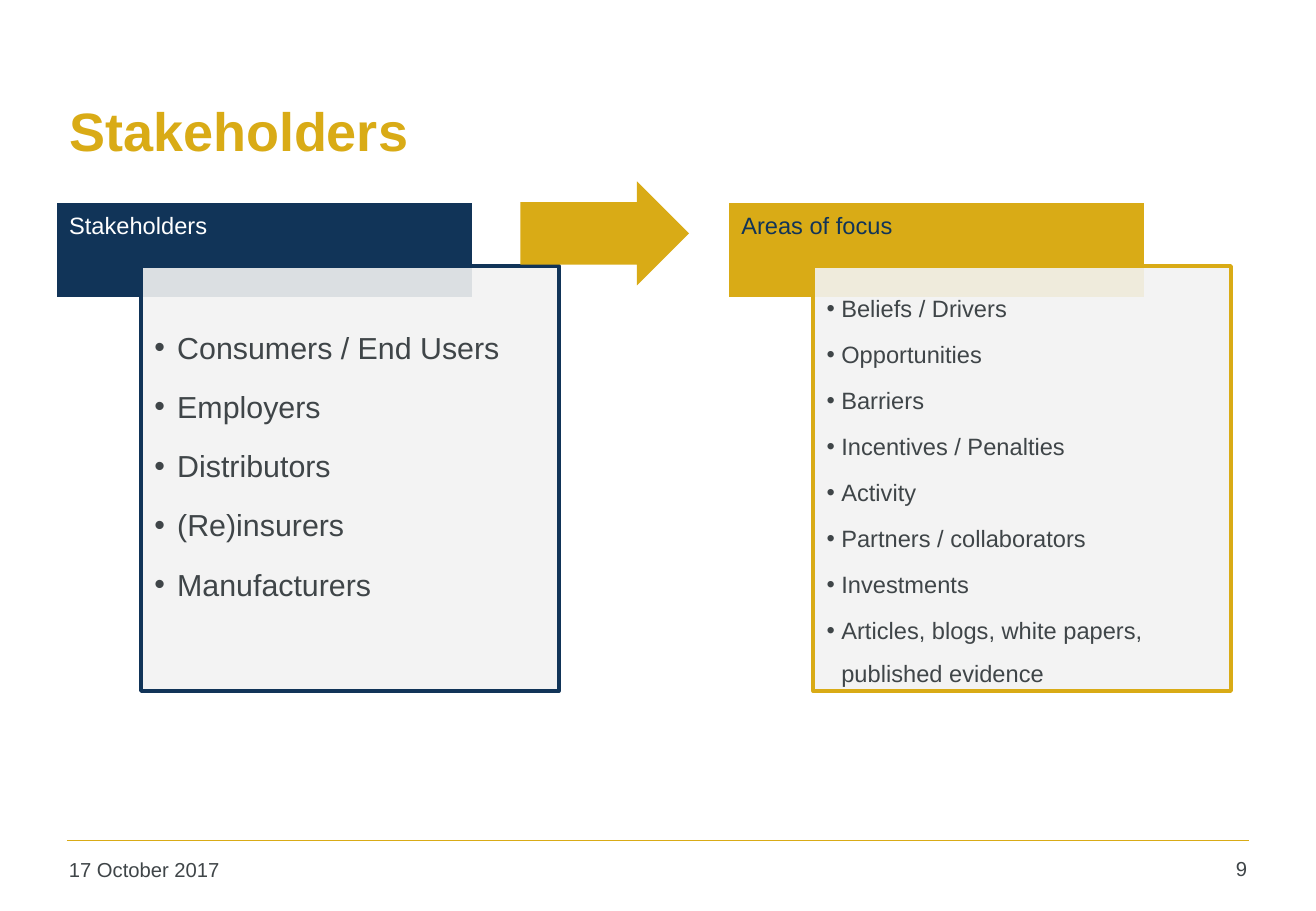
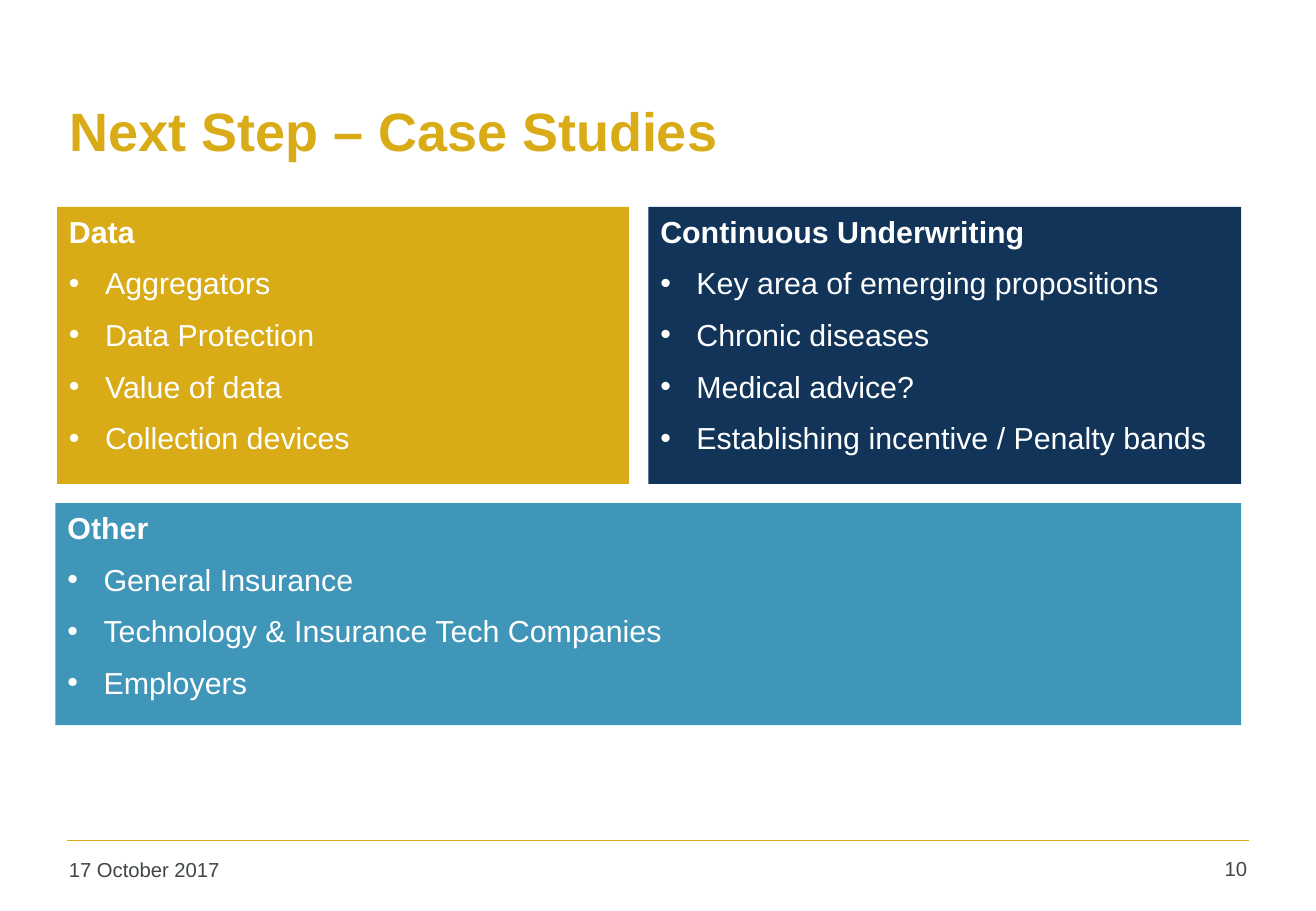
from pptx import Presentation
from pptx.dml.color import RGBColor
from pptx.enum.shapes import MSO_CONNECTOR, MSO_SHAPE
from pptx.enum.text import MSO_ANCHOR, PP_ALIGN
from pptx.oxml.ns import qn
from pptx.util import Pt
from lxml import etree

RECT, FLOW = MSO_SHAPE.RECTANGLE, MSO_SHAPE.FLOWCHART_PROCESS
ARROW, LINE = MSO_SHAPE.RIGHT_ARROW, MSO_CONNECTOR.STRAIGHT
TOP, MIDDLE = MSO_ANCHOR.TOP, MSO_ANCHOR.MIDDLE
LEFT, RIGHT = PP_ALIGN.LEFT, PP_ALIGN.RIGHT

GOLD = RGBColor(0xD9, 0xAB, 0x16)
NAVY = RGBColor(0x11, 0x34, 0x58)
BLUE = RGBColor(0x40, 0x96, 0xB8)
PALE = RGBColor(0xF2, 0xF2, 0xF2)
GREY = RGBColor(0x3F, 0x45, 0x48)
WHITE = RGBColor(0xFF, 0xFF, 0xFF)


def add_box(slide, kind, place, fill, edge=None):
    box = slide.shapes.add_shape(kind, *map(Pt, place))
    box.shadow.inherit = False
    box.fill.solid()
    box.fill.fore_color.rgb = fill
    if edge is None:
        box.line.fill.background()
    else:
        box.line.color.rgb = edge
        box.line.width = Pt(2)
    return box


def add_text(shape, lines, size, color, insets=(7.2, 3.6, 7.2, 3.6), anchor=TOP,
             align=LEFT, bold=False, indent=0, **spacing):
    """Write lines; a bold first line is a heading when the rest are bulleted."""
    frame = shape.text_frame
    frame.word_wrap = True
    frame.vertical_anchor = anchor
    for side, inset in zip(("left", "top", "right", "bottom"), insets):
        setattr(frame, f"margin_{side}", Pt(inset))
    for i, text in enumerate(lines):
        para = frame.paragraphs[0] if i == 0 else frame.add_paragraph()
        para.text = text
        head = bold and i == 0
        if indent and not head:
            props = para._p.get_or_add_pPr()
            props.set("marL", str(Pt(indent)))
            props.set("indent", str(-Pt(indent)))
            etree.SubElement(props, qn("a:buFont")).set("typeface", "Arial")
            etree.SubElement(props, qn("a:buChar")).set("char", "•")
        para.alignment = align
        for name, value in spacing.items():
            if i or name != "space_before":
                setattr(para, name, value)
        look = {"name": "Arial", "size": Pt(size), "bold": head}
        for name, value in look.items():
            setattr(para.font, name, value)
        para.font.color.rgb = color


deck = Presentation()
deck.slide_width, deck.slide_height = Pt(780), Pt(540)

# Shared title, rule and footer
slides = []
for number, title in ((9, "Stakeholders"), (10, "Next Step – Case Studies")):
    slide = deck.slides.add_slide(deck.slide_layouts[5])
    slides.append(slide)
    head = slide.shapes.title
    head.left, head.top, head.width, head.height = map(Pt, (33.8, 32.2, 707, 90))
    add_text(head, [title], 32, GOLD, anchor=MIDDLE, bold=True)
    rule = slide.shapes.add_connector(LINE, Pt(39.6), Pt(498.3), Pt(740.2), Pt(498.3))
    rule.line.color.rgb = GOLD
    rule.line.width = Pt(1)
    etree.SubElement(rule._element.spPr, qn("a:effectLst"))
    for place, text, align in (((33.8, 504.7, 172, 26), "17 October 2017", LEFT),
                               ((690.8, 504, 55.5, 26.6), str(number), RIGHT)):
        note = slide.shapes.add_textbox(*map(Pt, place))
        add_text(note, [text], 12, GREY, align=align)

# Slide 1: two overlapping panels with an arrow between them
slide = slides[0]
panels = [
    ("Stakeholders", NAVY, WHITE, 18, 13.5, 26.5,
     ["Consumers / End Users", "Employers", "Distributors", "(Re)insurers",
      "Manufacturers"]),
    ("Areas of focus", GOLD, NAVY, 14, 8.7, 8,
     ["Beliefs / Drivers", "Opportunities", "Barriers", "Incentives / Penalties",
      "Activity", "Partners / collaborators", "Investments",
      "Articles, blogs, white papers, published evidence"]),
]
for i, (name, tint, ink, size, indent, top, items) in enumerate(panels):
    left = 33 + i * 398.4
    label = add_box(slide, RECT, (left, 119.5, 247.7, 57.6), tint, WHITE)
    add_text(label, [name], 14, ink, (8, 7.5, 8, 4), line_spacing=0.9)
    body = add_box(slide, FLOW, (left + 50.6, 157.7, 247.7, 252), PALE, tint)
    shade = body._element.spPr.find(qn("a:solidFill"))[0]
    etree.SubElement(shade, qn("a:alpha")).set("val", "90000")
    add_text(body, items, size, GREY, (8, top, 8, 8), indent=indent,
             line_spacing=1.5, space_after=Pt(size * 0.15))
    if i == 0:
        arrow = add_box(slide, ARROW, (308.4, 107.5, 100, 61.7), GOLD)
        arrow.adjustments[0], arrow.adjustments[1] = 0.6, 0.5

# Slide 2: case study cards
cards = [
    ((33.8, 122.6, 339, 164.2), GOLD,
     ["Data", "Aggregators", "Data Protection", "Value of data",
      "Collection devices"]),
    ((384.3, 122.6, 351.3, 164.2), NAVY,
     ["Continuous Underwriting", "Key area of emerging propositions",
      "Chronic diseases", "Medical advice?",
      "Establishing incentive / Penalty bands"]),
    ((32.9, 298.2, 702.7, 131.6), BLUE,
     ["Other", "General Insurance", "Technology & Insurance Tech Companies",
      "Employers"]),
]
for place, tint, lines in cards:
    card = add_box(slides[1], RECT, place, tint)
    add_text(card, lines, 18, WHITE, bold=True, indent=21.4, space_before=Pt(9))

deck.save("out.pptx")
